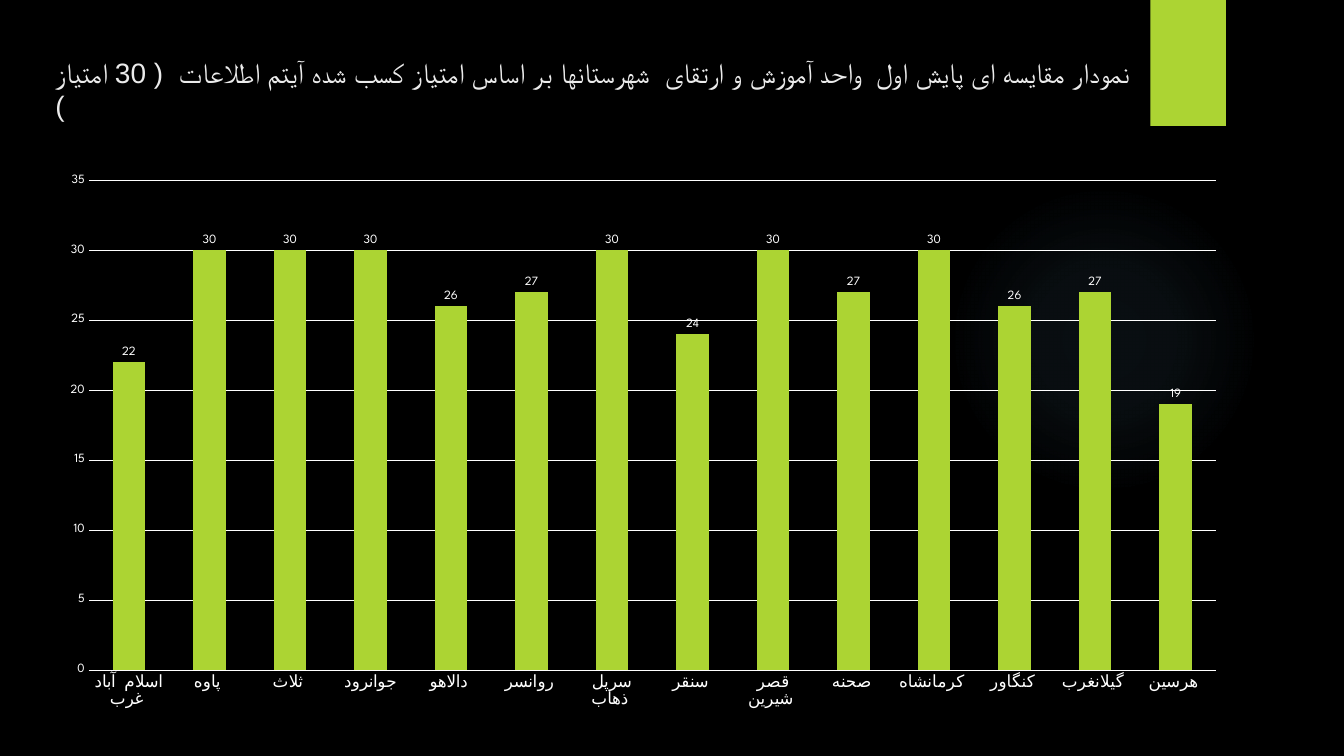
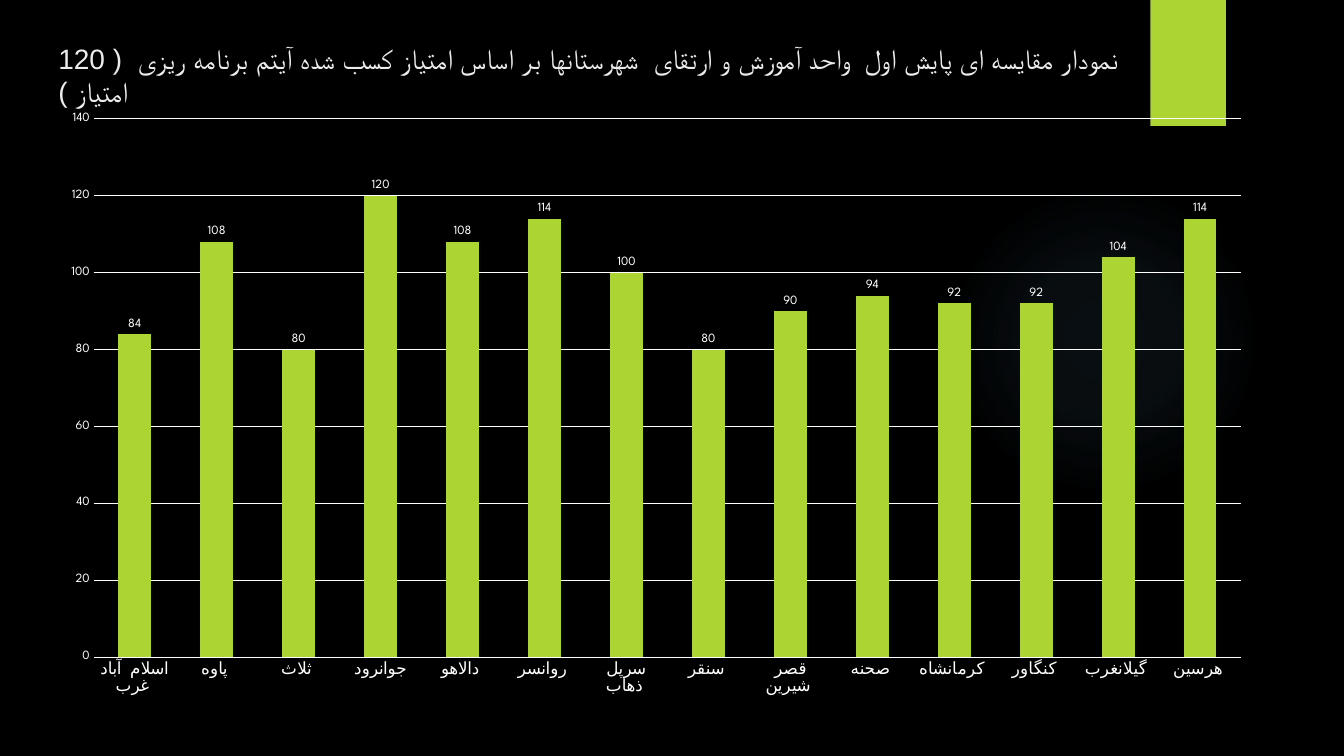
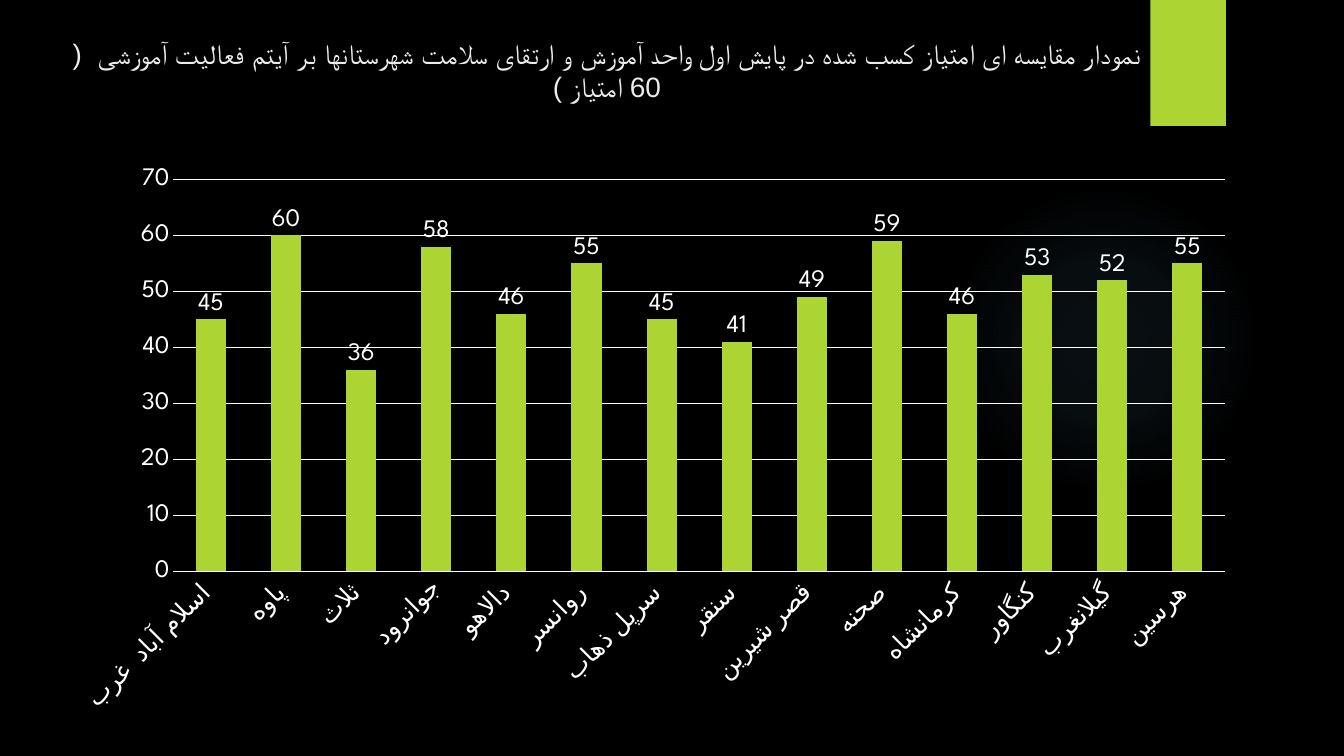
from lxml import etree
from pptx import Presentation
from pptx.chart.data import CategoryChartData as ChartData
from pptx.dml.color import RGBColor as RGB
from pptx.enum.chart import XL_CHART_TYPE as Kind, XL_LABEL_POSITION as Spot, XL_TICK_MARK as Tick
from pptx.enum.shapes import MSO_SHAPE as Form
from pptx.enum.text import MSO_ANCHOR as Anchor, PP_ALIGN as Align
from pptx.oxml import parse_xml
from pptx.oxml.ns import nsdecls, qn
from pptx.util import Inches, Pt

FONT, ARAB = "League Spartan", "Arial"
BLACK, WHITE, PALE, LIME, GLOW = "000000", "FFFFFF", "EBEBEB", "ACD433", "7AC4F0"

TOWNS = ["اسلام آباد  غرب ", "پاوه ", "ثلاث ", "جوانرود", "دالاهو ", "روانسر ", "سرپل ذهاب ",
         "سنقر ", "قصر شیرین ", "صحنه ", "کرمانشاه ", "کنگاور ", "گیلانغرب ", "هرسین "]
LEAD = "نمودار مقایسه ای پایش اول  واحد آموزش و ارتقای  شهرستانها بر اساس امتیاز کسب شده آیتم"

# Boxes are left, top, width, height in inches; step is the value axis unit, seven steps high.
SLIDES = [
    dict(title=f"{LEAD} اطلاعات  ( 30 امتیاز )", head=(0.45, 0.5, 10.89, 0.78),
         box=(0.46, 1.62, 11.83, 5.52), plot=(0.88, 1.79, 11.18, 4.86), step=5,
         vals=[22, 30, 30, 30, 26, 27, 30, 24, 30, 27, 30, 26, 27, 19]),
    dict(title=f"{LEAD} برنامه ریزی  ( 120 امتیاز )", head=(0.48, 0.36, 11.08, 0.95),
         box=(0.46, 1, 12.09, 6.02), plot=(0.93, 1.18, 11.38, 5.34), step=20,
         vals=[84, 108, 80, 120, 108, 114, 100, 80, 90, 94, 92, 92, 104, 114]),
    dict(title="نمودار مقایسه ای امتیاز کسب شده در پایش اول واحد آموزش و ارتقای سلامت "
               "شهرستانها بر آیتم فعالیت آموزشی  ( 60 امتیاز )",
         head=(0.62, 0.31, 10.8, 0.64), align=Align.CENTER,
         box=(0.58, 0.86, 11.8, 6.34), plot=(1.72, 1.78, 10.43, 3.89), step=10,
         vals=[45, 60, 36, 58, 46, 55, 45, 41, 49, 59, 46, 53, 52, 55],
         size=18, town_size=18, turn=-45),
]


def place(box):
    return [Inches(n) for n in box]


def paint(fill, color):
    fill.solid()
    fill.fore_color.rgb = RGB.from_string(color)


def style(font, size, color=WHITE):
    font.name = FONT
    font.size = Pt(size)
    font.color.rgb = RGB.from_string(color)


def rule(line):
    line.color.rgb = RGB.from_string(WHITE)
    line.width = Pt(0.75)


def add_form(slide, form, box):
    shape = slide.shapes.add_shape(form, *place(box))
    shape.shadow.inherit = False
    shape.line.fill.background()
    return shape


def add_glow(slide):
    """Faint round light that fades out towards its edge."""
    shape = add_form(slide, Form.OVAL, (9.41, 1.83, 3.08, 3.08))
    shape.fill.background()
    stops = "".join(
        f'<a:gs pos="{pos * 1000}"><a:srgbClr val="{GLOW}">'
        f'<a:alpha val="{alpha * 1000}"/></a:srgbClr></a:gs>'
        for pos, alpha in [(0, 7), (36, 6), (69, 0)])
    grad = parse_xml(
        f'<a:gradFill {nsdecls("a")}><a:gsLst>{stops}</a:gsLst><a:path path="circle">'
        '<a:fillToRect l="50000" t="50000" r="50000" b="50000"/></a:path></a:gradFill>')
    props = shape.fill._xPr
    props.replace(props.find(qn("a:noFill")), grad)


def add_tab(slide):
    paint(add_form(slide, Form.RECTANGLE, (11.41, 0, 0.75, 1.25)).fill, LIME)


def add_title(slide, text, box, align):
    frame = slide.shapes.add_textbox(*place(box)).text_frame
    frame.word_wrap = True
    frame.vertical_anchor = Anchor.TOP
    para = frame.paragraphs[0]
    para.text = text
    para.alignment = align
    font = para.runs[0].font
    style(font, 20, PALE)
    etree.SubElement(font._element, qn("a:cs")).set("typeface", ARAB)


def fix_plot(chart, box, plot):
    """Pin the inner plot area, given on the slide, as shares of the chart."""
    area = chart._chartSpace.chart.plotArea
    for old in area.findall(qn("c:layout")):
        area.remove(old)
    layout = etree.Element(qn("c:layout"))
    manual = etree.SubElement(layout, qn("c:manualLayout"))
    left, top, wide, high = box
    shares = [(plot[0] - left) / wide, (plot[1] - top) / high, plot[2] / wide, plot[3] / high]
    marks = [("layoutTarget", "inner"), ("xMode", "edge"), ("yMode", "edge")]
    for tag, val in marks + list(zip("xywh", shares)):
        etree.SubElement(manual, qn(f"c:{tag}")).set("val", str(val))
    area.insert(0, layout)


def style_axes(chart, step, size, town_size, turn):
    towns, marks = chart.category_axis, chart.value_axis
    for axis, points in [(towns, town_size), (marks, size)]:
        axis.major_tick_mark = axis.minor_tick_mark = Tick.NONE
        style(axis.tick_labels.font, points)
    rule(towns.format.line)
    if turn:
        body = towns._element.find(qn("c:txPr")).find(qn("a:bodyPr"))
        body.set("rot", str(turn * 60000))
        body.set("vert", "horz")
    marks.minimum_scale, marks.maximum_scale, marks.major_unit = 0, 7 * step, step
    marks.format.line.fill.background()
    rule(marks.major_gridlines.format.line)


def add_bars(slide, vals, box, plot, step, size=9, town_size=12, turn=0):
    data = ChartData()
    data.categories = TOWNS
    data.add_series("Series 1", vals)
    chart = slide.shapes.add_chart(Kind.COLUMN_CLUSTERED, *place(box), data).chart
    chart.has_title = chart.has_legend = False
    style(chart.font, size)
    fix_plot(chart, box, plot)
    style_axes(chart, step, size, town_size, turn)
    bars = chart.plots[0]
    bars.gap_width = 150
    bars.vary_by_categories = False
    paint(bars.series[0].format.fill, LIME)
    labels = bars.series[0].data_labels
    labels.show_value = True
    labels.position = Spot.OUTSIDE_END
    style(labels.font, size)


def add_page(deck, title, head, align=Align.LEFT, **bars):
    slide = deck.slides.add_slide(deck.slide_layouts[6])
    add_glow(slide)
    add_tab(slide)
    add_bars(slide, **bars)
    add_title(slide, title, head, align)


def main():
    deck = Presentation()
    deck.slide_width, deck.slide_height = Inches(13.33), Inches(7.5)
    paint(deck.slide_master.background.fill, BLACK)
    for page in SLIDES:
        add_page(deck, **page)
    deck.save("out.pptx")


if __name__ == "__main__":
    main()
